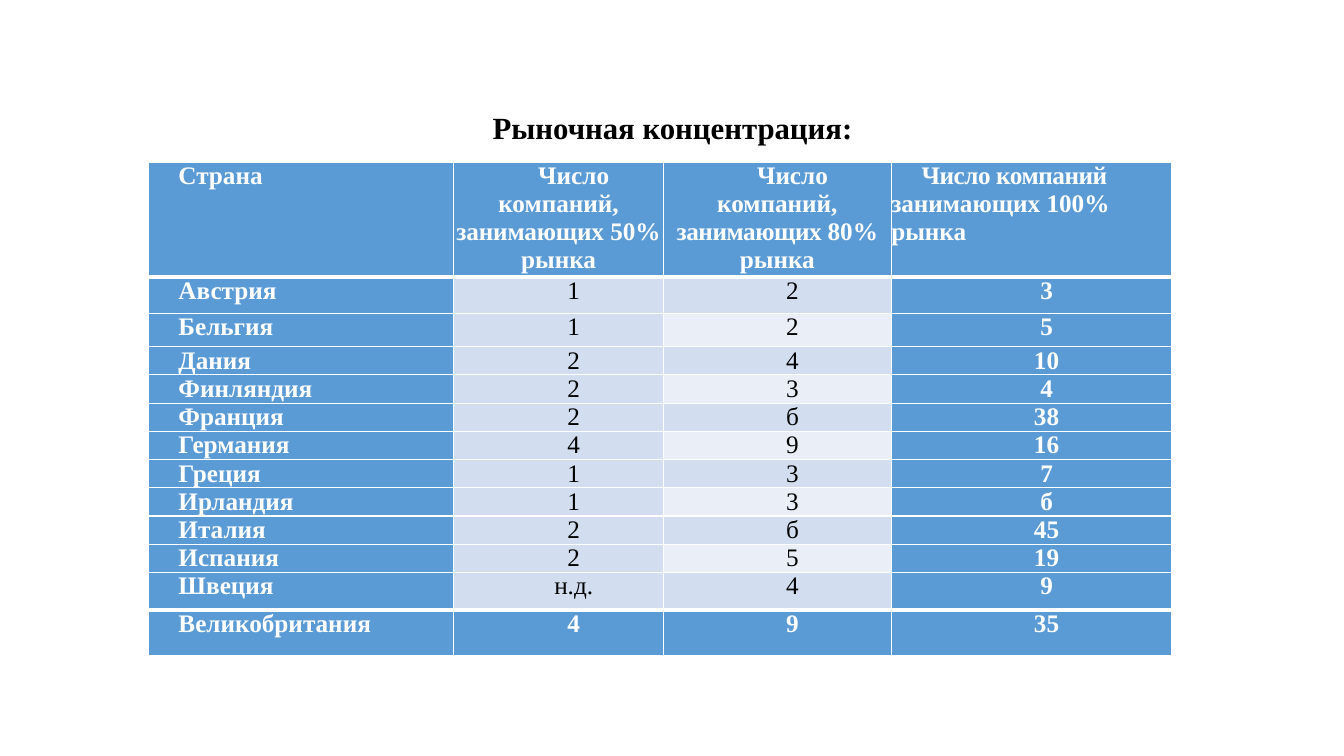
from dataclasses import dataclass

from lxml.etree import SubElement
from pptx import Presentation
from pptx.dml.color import RGBColor
from pptx.enum.text import MSO_ANCHOR, MSO_AUTO_SIZE, PP_ALIGN
from pptx.oxml.ns import qn
from pptx.util import Emu, Pt

PX = 9144
FONT = "Times New Roman"
COLORS = {
    "black": "000000",
    "white": "FFFFFF",
    "blue": "5B9BD5",
    "band": "D2DEEF",
    "pale": "EAEFF7",
}
COLUMN_WIDTHS = [303, 208, 226, 278]
ROW_HEIGHTS = [114, 36, 33, 28, 28, 28, 28, 28, 28, 28, 28, 37, 46]
FIRST_LINE_INDENT = 30


@dataclass(frozen=True)
class Span:
    text: str
    spacing: int = 0


@dataclass(frozen=True)
class Country:
    name: str
    half: str
    most: str
    whole: str

    def cells(self) -> list[list[Span]]:
        return [[Span(text)] for text in (self.name, self.half, self.most, self.whole)]


HEADER = [
    [Span("Страна")],
    [Span("Число компаний, "), Span("занимающих ", -10), Span("50% рынка")],
    [Span("Число компаний, "), Span("занимающих ", -30), Span("80% рынка")],
    [Span("Число компаний ", -30), Span("занимающих 100% рынка")],
]
COUNTRIES = [
    Country("Австрия", "1", "2", "3"),
    Country("Бельгия", "1", "2", "5"),
    Country("Дания", "2", "4", "10"),
    Country("Финляндия", "2", "3", "4"),
    Country("Франция", "2", "б", "38"),
    Country("Германия", "4", "9", "16"),
    Country("Греция", "1", "3", "7"),
    Country("Ирландия", "1", "3", "б"),
    Country("Италия", "2", "б", "45"),
    Country("Испания", "2", "5", "19"),
    Country("Швеция", "н.д.", "4", "9"),
    Country("Великобритания", "4", "9", "35"),
]
LAST_ROW = len(COUNTRIES)
LAST_COLUMN = len(COLUMN_WIDTHS) - 1


def px(length: int) -> Emu:
    return Emu(length * PX)


def add_span(para, span: Span, size: int, color: str, bold: bool) -> None:
    run = para.add_run()
    run.text = span.text
    font = run.font
    font.name, font.size, font.bold = FONT, Pt(size), bold
    font.color.rgb = RGBColor.from_string(COLORS[color])
    if span.spacing:
        font._element.set("spc", str(span.spacing))


def set_indent(para, first_line: int) -> None:
    properties = para._p.get_or_add_pPr()
    properties.set("marL", "0")
    properties.set("indent", str(px(first_line)))


def add_borders(cell, row: int) -> None:
    top = 3 if row in (1, LAST_ROW) else 1
    bottom = 3 if row in (0, LAST_ROW - 1) else 1
    properties = cell._tc.get_or_add_tcPr()
    for side, width in {"L": 1, "R": 1, "T": top, "B": bottom}.items():
        line = SubElement(properties, qn(f"a:ln{side}"), w=str(Pt(width)))
        fill = SubElement(line, qn("a:solidFill"))
        SubElement(fill, qn("a:srgbClr"), val=COLORS["white"])


def cell_fill(row: int, column: int) -> str:
    if row in (0, LAST_ROW) or column in (0, LAST_COLUMN):
        return "blue"
    return "pale" if column == 2 and row % 2 == 0 else "band"


def fill_cell(cell, row: int, column: int, spans: list[Span]) -> None:
    cell.margin_left = cell.margin_right = cell.margin_top = cell.margin_bottom = 0
    cell.vertical_anchor = MSO_ANCHOR.TOP
    add_borders(cell, row)
    fill = cell_fill(row, column)
    cell.fill.solid()
    cell.fill.fore_color.rgb = RGBColor.from_string(COLORS[fill])
    para = cell.text_frame.paragraphs[0]
    left = column == 0 or (row == 0 and column == LAST_COLUMN)
    para.alignment = PP_ALIGN.LEFT if left else PP_ALIGN.CENTER
    set_indent(para, FIRST_LINE_INDENT)
    strong = fill == "blue"
    for span in spans:
        add_span(para, span, 18, "white" if strong else "black", strong)


def add_heading(page) -> None:
    box = page.placeholders[1]
    box.left, box.top, box.width, box.height = px(92), px(107), px(1150), px(594)
    frame = box.text_frame
    frame.auto_size = MSO_AUTO_SIZE.NONE
    frame.vertical_anchor = MSO_ANCHOR.TOP
    para = frame.paragraphs[0]
    para.alignment = PP_ALIGN.CENTER
    para.line_spacing = 0.9
    para.space_before = Pt(10)
    set_indent(para, 0)
    SubElement(para._p.get_or_add_pPr(), qn("a:buNone"))
    add_span(para, Span("Рыночная концентрация:"), 22, "black", True)


def add_concentration_table(page) -> None:
    table = page.shapes.add_table(
        len(ROW_HEIGHTS), len(COLUMN_WIDTHS),
        px(147), px(161), px(sum(COLUMN_WIDTHS)), px(sum(ROW_HEIGHTS)),
    ).table
    table.first_row = table.horz_banding = False
    for column, width in zip(table.columns, COLUMN_WIDTHS):
        column.width = px(width)
    for row, height in zip(table.rows, ROW_HEIGHTS):
        row.height = px(height)
    rows = [HEADER] + [country.cells() for country in COUNTRIES]
    for row, contents in enumerate(rows):
        for column, spans in enumerate(contents):
            fill_cell(table.cell(row, column), row, column, spans)


def main() -> None:
    deck = Presentation()
    deck.slide_width, deck.slide_height = px(1333), px(750)
    page = deck.slides.add_slide(deck.slide_layouts[1])
    title = page.shapes.title.element
    title.getparent().remove(title)
    add_heading(page)
    add_concentration_table(page)
    deck.save("out.pptx")


if __name__ == "__main__":
    main()
